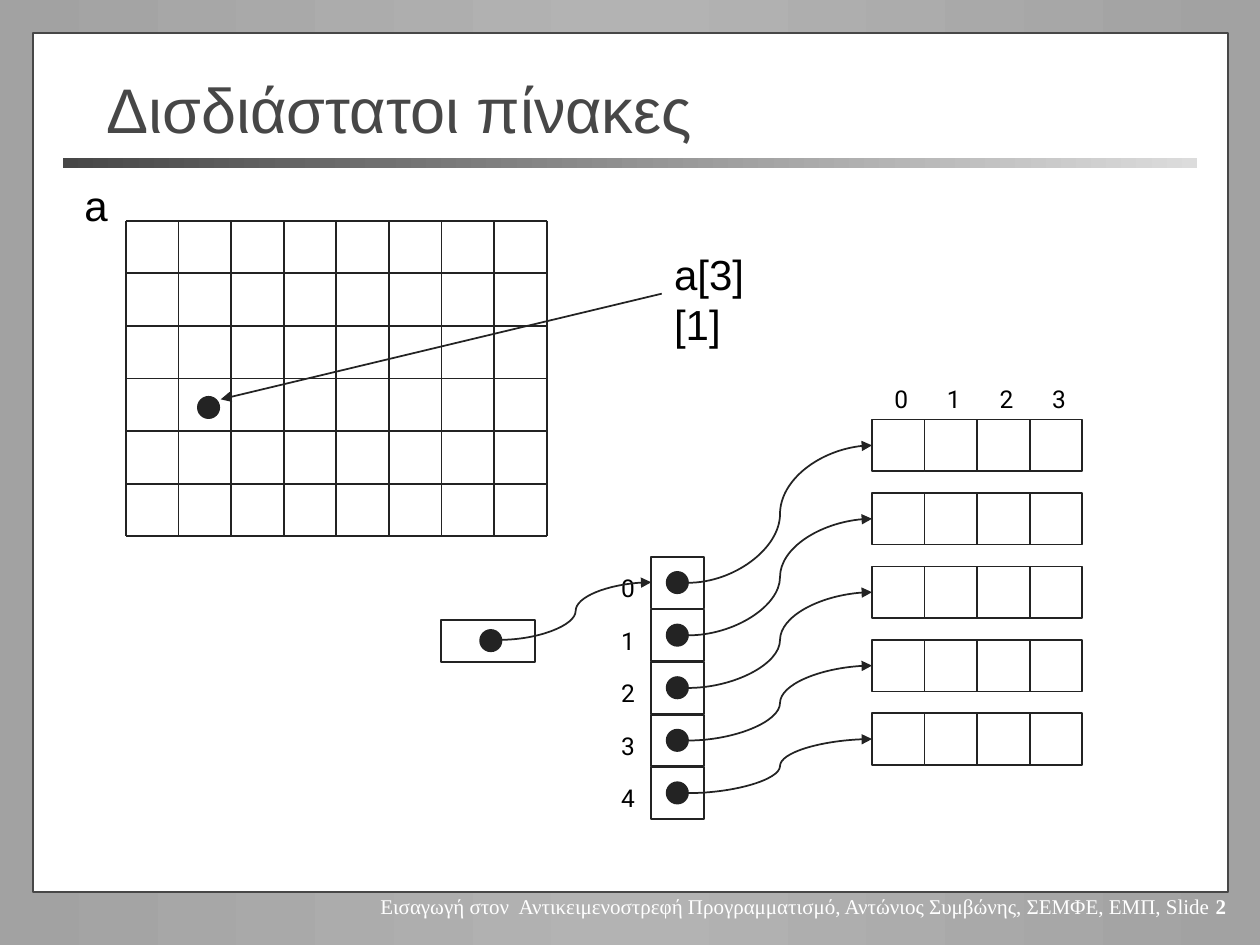
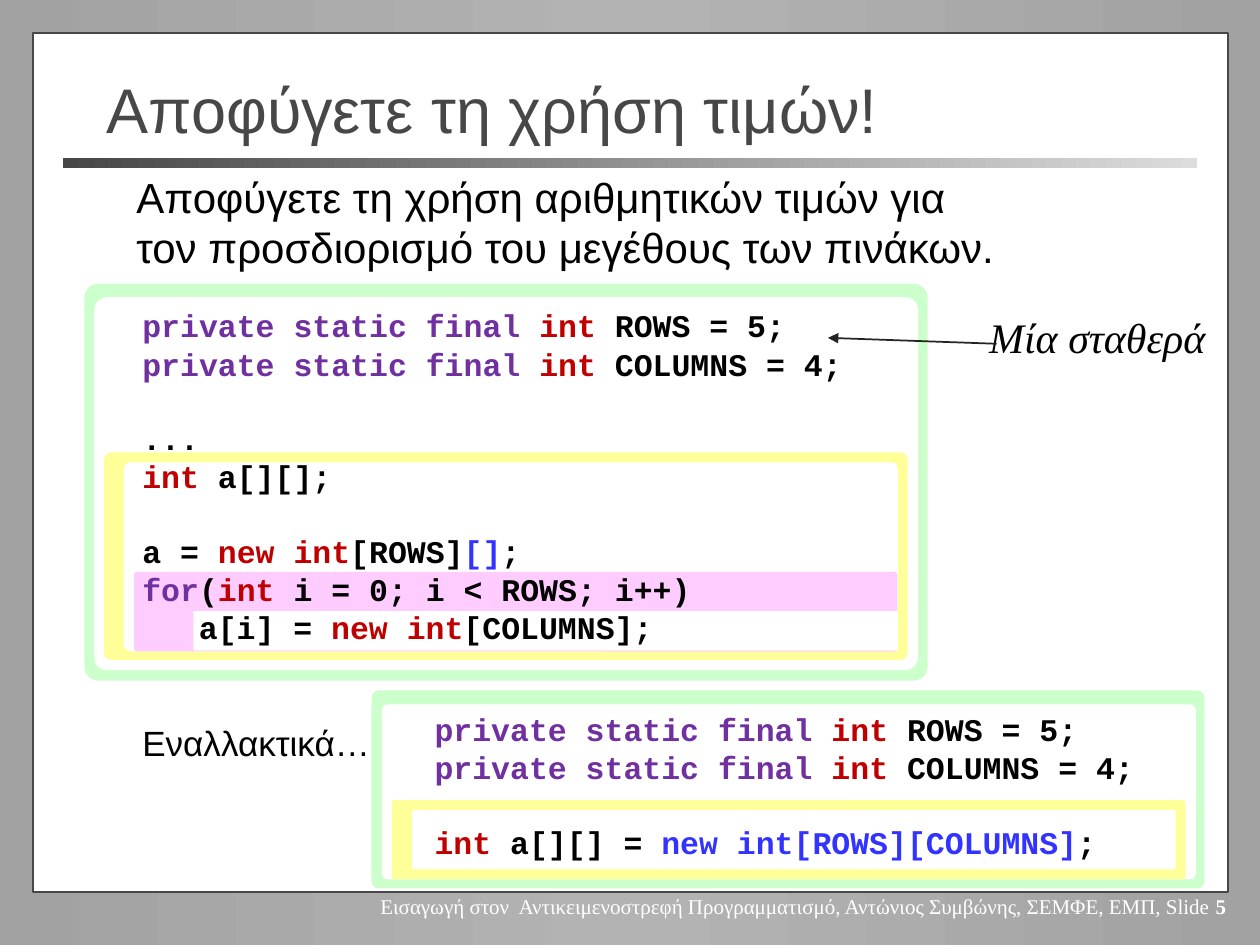
"""Builds two lecture slides on two-dimensional arrays."""
from lxml import etree
from pptx import Presentation
from pptx.dml.color import RGBColor
from pptx.enum.shapes import MSO_CONNECTOR, MSO_SHAPE
from pptx.enum.text import MSO_ANCHOR, PP_ALIGN
from pptx.oxml.ns import qn
from pptx.util import Cm, Pt

RECT, ROUND, OVAL = MSO_SHAPE.RECTANGLE, MSO_SHAPE.ROUNDED_RECTANGLE, MSO_SHAPE.OVAL
LINE, CURVE = MSO_CONNECTOR.STRAIGHT, MSO_CONNECTOR.CURVE
RIGHT, MIDDLE = PP_ALIGN.RIGHT, MSO_ANCHOR.MIDDLE
INK, GREY, BLACK, WHITE = "232323", "474747", "000000", "FFFFFF"
VIOLET, RED, BLUE = "7030A0", "C00000", "3333FF"
GREEN, YELLOW, PINK = "CCFFCC", "FFFF99", "FFCCFF"
SANS, SERIF, MONO, DIGIT = "Arial", "Times New Roman", "Courier New", "Roboto"
CELL, TALL, DOT, STEP = 1.06, 1.04, 0.43, 1.48
rgb = RGBColor.from_string


def draw(page, kind, place, fill=None, edge=None):
    """Add a preset shape with an optional fill and outline."""
    shape = page.shapes.add_shape(kind, *map(Cm, place))
    shape.shadow.inherit = False
    if fill:
        shape.fill.solid()
        shape.fill.fore_color.rgb = rgb(fill)
    else:
        shape.fill.background()
    if edge:
        shape.line.color.rgb = rgb(edge)
        shape.line.width = Pt(1)
    else:
        shape.line.fill.background()
    return shape


def write(page, place, lines, size, font=SANS, tint=BLACK, wrap=True, gap=0.25):
    """Add a text box whose lines are lists of (text, colour) runs."""
    frame = page.shapes.add_textbox(*map(Cm, place)).text_frame
    frame.word_wrap = wrap
    for i, line in enumerate(lines):
        para = frame.add_paragraph() if i else frame.paragraphs[0]
        para.font.size = Pt(size)
        para.font.name = font
        para.font.color.rgb = rgb(tint)
        para.space_before = Pt(size * gap)
        for words, hue in line:
            run = para.add_run()
            run.text = words
            if hue != tint:
                run.font.color.rgb = rgb(hue)
    return frame


deck = Presentation()
deck.slide_width, deck.slide_height = Cm(25.4), Cm(19.05)
pages = []
for title, number in [("Δισδιάστατοι πίνακες", "2"), ("Αποφύγετε τη χρήση τιμών!", "5")]:
    page = deck.slides.add_slide(deck.slide_layouts[6])
    pages.append(page)
    back = page.background.fill
    back.gradient()
    back.gradient_angle = 0
    draw(page, RECT, (0.66, 0.66, 24.1, 17.32), WHITE, GREY)
    bar = draw(page, RECT, (1.27, 3.18, 22.86, 0.2))
    bar.fill.gradient()
    bar.fill.gradient_angle = 0
    for stop, hue in zip(bar.fill.gradient_stops, (GREY, "DCDCDC")):
        stop.color.rgb = rgb(hue)
    stops = page.background._cSld.find(".//" + qn("a:gsLst"))
    for stop in list(stops):
        stops.remove(stop)
    for spot, hue in [(0, "A2A2A2"), (50000, "B3B3B3"), (100000, "A2A2A2")]:
        stop = etree.SubElement(stops, qn("a:gs"), pos=str(spot))
        etree.SubElement(stop, qn("a:srgbClr"), val=hue)
    head = write(page, (1.9, 1.4, 21.6, 1.57), [[(title, GREY)]], 36, tint=GREY, gap=0)
    head.vertical_anchor = MIDDLE
    note = "Εισαγωγή στον  Αντικειμενοστρεφή Προγραμματισμό, Αντώνιος Συμβώνης, ΣΕΜΦΕ, ΕΜΠ, Slide "
    foot = write(page, (7.09, 17.88, 17.88, 0.76), [[(note, WHITE), (number, WHITE)]],
                 12, SERIF, WHITE, wrap=False, gap=0)
    foot.paragraphs[0].alignment = RIGHT
    foot.paragraphs[0].runs[1].font.bold = True

grid, code = pages
wires = [(grid, CURVE, 10.08, 12.9, 13.13, 11.74, True),
         (grid, LINE, 13.34, 5.92, 4.45, 8.05, True),
         (code, LINE, 20.09, 6.93, 16.69, 6.81, True)]
for i in range(9):
    wires.append((grid, LINE, 2.54 + i * CELL, 4.45, 2.54 + i * CELL, 4.45 + 6 * CELL, False))
for i in range(7):
    wires.append((grid, LINE, 2.54, 4.45 + i * CELL, 2.54 + 8 * CELL, 4.45 + i * CELL, False))

draw(grid, RECT, (8.89, 12.5, 1.9, 0.84), edge=INK)
dots = [(9.68, 12.7), (3.99, 8.0)]
marks = [(17.78 + j * CELL, 7.62, j) for j in range(4)]
for i in range(5):
    top = 11.23 + i * CELL
    draw(grid, RECT, (13.13, top, CELL, TALL), edge=INK)
    dots.append((13.44, top + 0.3))
    marks.append((12.27, top + 0.2, i))
    row = 8.46 + i * STEP
    wires.append((grid, CURVE, 13.87, top + 0.52, 17.58, row + 0.52, True))
    for j in range(4):
        draw(grid, RECT, (17.58 + j * CELL, row, CELL, TALL), edge=INK)
for x, y in dots:
    draw(grid, OVAL, (x, y, DOT, DOT), INK, INK)
for x, y, mark in marks:
    write(grid, (x, y, 0.79, 0.84), [[(str(mark), BLACK)]], 14, DIGIT, wrap=False)
write(grid, (1.45, 3.5, 0.97, 1.27), [[("a", BLACK)]], 24, wrap=False)
write(grid, (13.34, 4.88, 2.84, 1.27), [[("a[3][1]", BLACK)]], 24)

panels = [
    (7.49, 13.92, 16.79, 3.99, GREEN), (7.7, 14.2, 16.41, 3.53, WHITE),
    (7.9, 16.13, 16.0, 1.6, YELLOW), (8.31, 16.33, 15.39, 1.19, WHITE),
    (1.7, 5.72, 17.0, 8.0, GREEN), (1.9, 5.99, 16.61, 7.52, WHITE),
    (2.1, 9.12, 16.2, 4.19, YELLOW), (2.5, 9.32, 15.6, 3.81, WHITE),
    (2.7, 11.53, 15.39, 1.6, PINK), (3.9, 12.32, 14.2, 0.79, WHITE)]
for *place, hue in panels:
    draw(code, ROUND, place, hue).adjustments[0] = 0.035

sizes = [[("private static final ", VIOLET), ("int", RED), (f" {name};", BLACK)]
         for name in ("ROWS = 5", "COLUMNS = 4")]
loop = sizes + [
    [("...", BLACK)],
    [("int", RED), (" a[][];", BLACK)],
    [("a = ", BLACK), ("new int", RED), ("[ROWS]", BLACK), ("[]", BLUE), (";", BLACK)],
    [("for", VIOLET), ("(", BLACK), ("int ", RED), ("i = 0; i < ROWS; i++)", BLACK)],
    [("a[i] = ", BLACK), ("new int", RED), ("[COLUMNS];", BLACK)]]
brief = sizes + [[("int ", RED), ("a[][] = ", BLACK), ("new int[ROWS][COLUMNS]", BLUE), (";", BLACK)]]
for place, lines, breaks in [((2.62, 6.2, 15.29, 7.01), loop, (2, 4)),
                             ((8.51, 14.33, 15.29, 3.2), brief, (2,))]:
    paras = write(code, place, lines, 18, MONO).paragraphs
    for i, para in enumerate(paras):
        para.font.bold = True
        para.line_spacing = 0.8
        if i in breaks:
            para.space_before = Pt(25.4)
    if lines is loop:
        paras[-1]._p.get_or_add_pPr().set("marL", str(Cm(1.14)))

lead = "Αποφύγετε τη χρήση αριθμητικών τιμών για τον προσδιορισμό του μεγέθους των πινάκων."
write(code, (2.5, 3.33, 18.03, 2.31), [[(lead, BLACK)]], 24)
label = write(code, (19.69, 6.15, 4.88, 1.27), [[("Μία σταθερά", BLACK)]], 24, SERIF, wrap=False)
label.paragraphs[0].font.italic = True
write(code, (2.62, 14.43, 5.16, 1.12), [[("Εναλλακτικά…", BLACK)]], 20, wrap=False)

for page, kind, x1, y1, x2, y2, tip in wires:
    wire = page.shapes.add_connector(kind, Cm(x1), Cm(y1), Cm(x2), Cm(y2))
    wire.line.color.rgb = rgb(INK)
    wire.line.width = Pt(1)
    if tip:
        etree.SubElement(wire.line._get_or_add_ln(), qn("a:tailEnd"), type="triangle")
    etree.SubElement(wire._element.spPr, qn("a:effectLst"))

deck.save("out.pptx")
